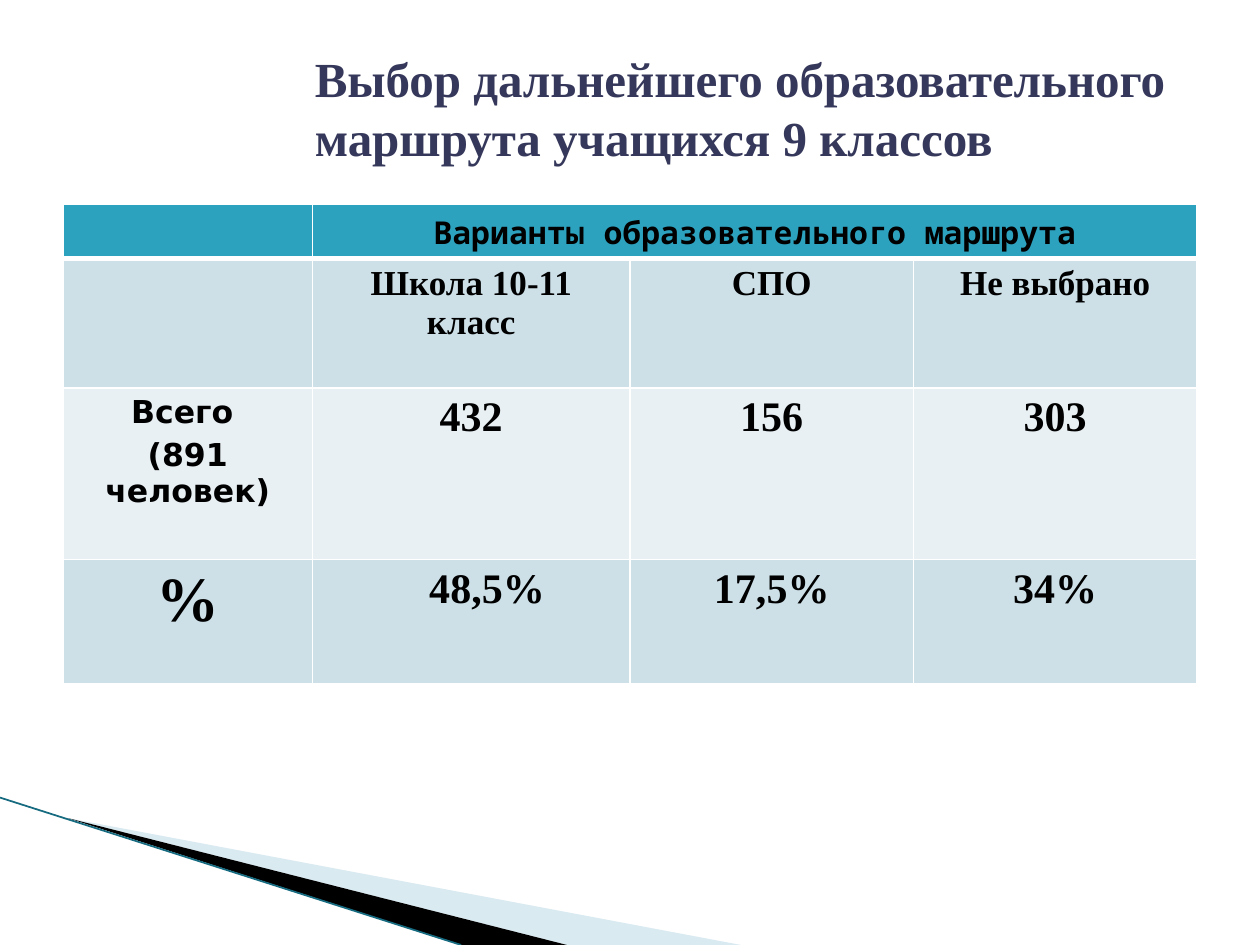
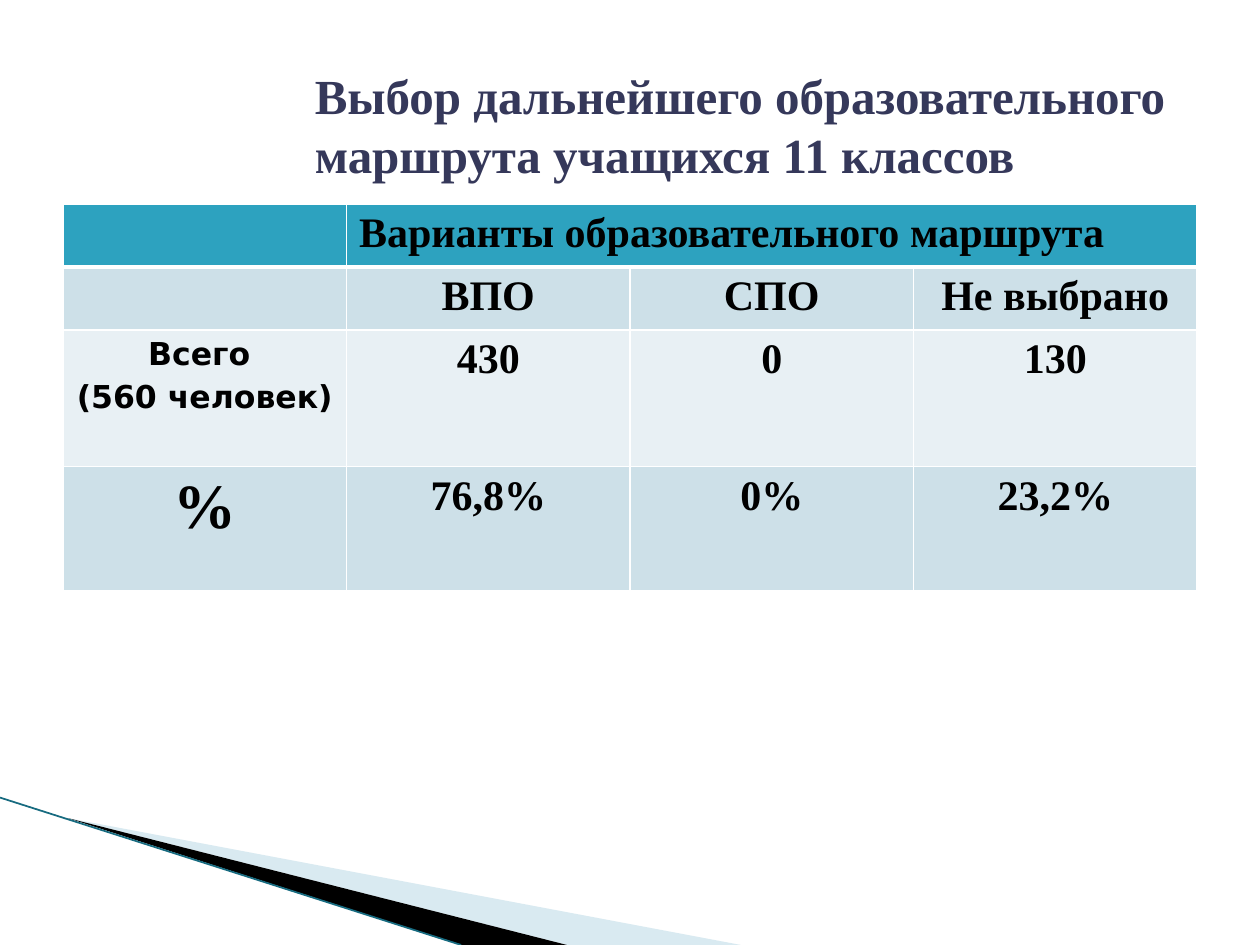
from collections import namedtuple

from lxml.etree import SubElement
from pptx import Presentation
from pptx.dml.color import RGBColor
from pptx.enum.shapes import MSO_CONNECTOR
from pptx.enum.text import MSO_ANCHOR, PP_ALIGN
from pptx.oxml.ns import qn
from pptx.util import Inches, Pt

WHITE = RGBColor(0xFF, 0xFF, 0xFF)
BLACK = RGBColor(0x00, 0x00, 0x00)
TITLE_INK = RGBColor(0x35, 0x38, 0x5A)
HEADER_FILL = RGBColor(0x2D, 0xA2, 0xBF)
DARK_ROW = RGBColor(0xCD, 0xE0, 0xE8)
LIGHT_ROW = RGBColor(0xE8, 0xF0, 0xF4)
PALE_WEDGE = RGBColor(0xA0, 0xCB, 0xDC)
EDGE_LINE = RGBColor(0x17, 0x6B, 0x80)
ROW_FILLS = (HEADER_FILL, DARK_ROW, LIGHT_ROW, DARK_ROW)

SERIF = "Times New Roman"
SANS = "DejaVu Sans"
MONO = "Noto Sans Mono"

Box = namedtuple("Box", "left top width height")
Style = namedtuple("Style", "font size align", defaults=(PP_ALIGN.CENTER,))

WEDGE_BOX = Box(0, 6.33, 6, 1.17)
TABLE_LEFT, TABLE_TOP, TABLE_WIDTH = 0.5, 1.62, 9
VALUE = Style(SERIF, 24)
TOTAL = Style(SANS, 18)
PERCENT = Style(SERIF, 36)
HEADING = "Варианты образовательного маршрута"


def add_corner_wedges(slide, box):
    def at(x, y):
        return Inches(box.left + x * box.width), Inches(box.top + y * box.height)

    def add_wedge(corners, color):
        start, *others = [at(x, y) for x, y in corners]
        builder = slide.shapes.build_freeform(*start)
        builder.add_line_segments(others, close=True)
        wedge = builder.convert_to_shape()
        wedge.shadow.inherit = False
        wedge.fill.solid()
        wedge.fill.fore_color.rgb = color
        wedge.line.fill.background()
        return wedge

    pale = add_wedge([(0.09, 0.14), (0.98, 1), (0.75, 1)], PALE_WEDGE)
    color = pale.fill._xPr.find(qn("a:solidFill"))[0]
    SubElement(color, qn("a:alpha"), val="40000")
    add_wedge([(0.09, 0.14), (0.75, 1), (0.61, 1)], BLACK)

    edge = slide.shapes.add_connector(MSO_CONNECTOR.STRAIGHT, *at(0, 0), *at(0.61, 1))
    edge.line.color.rgb = EDGE_LINE
    edge.line.width = Pt(1)
    SubElement(edge._element.spPr, qn("a:effectLst"))


def add_title(slide, text, box):
    frame = slide.shapes.add_textbox(*map(Inches, box)).text_frame
    frame.word_wrap = True
    frame.vertical_anchor = MSO_ANCHOR.MIDDLE
    title = frame.paragraphs[0]
    title.text = text
    title.font.name, title.font.size, title.font.bold = SERIF, Pt(28), True
    title.font.color.rgb = TITLE_INK


def add_borders(cell, bottom):
    for side in "LRTB":
        width = bottom if side == "B" else 1
        border = SubElement(cell._tc.get_or_add_tcPr(), qn(f"a:ln{side}"), w=str(Pt(width)))
        fill = SubElement(border, qn("a:solidFill"))
        SubElement(fill, qn("a:srgbClr"), val=str(WHITE))


def write_cell(cell, text, style):
    cell.text = text
    for index, paragraph in enumerate(cell.text_frame.paragraphs):
        paragraph.alignment = style.align
        if index:
            paragraph.space_before = Pt(0.2 * style.size)
        font = paragraph.font
        font.name, font.size, font.bold = style.font, Pt(style.size), True
        font.color.rgb = BLACK


def add_route_table(slide, column_shares, row_heights, heading_style, option_style,
                    options, total, counts, percents):
    box = Box(TABLE_LEFT, TABLE_TOP, TABLE_WIDTH, sum(row_heights))
    table = slide.shapes.add_table(len(row_heights), len(column_shares),
                                   *map(Inches, box)).table
    for column, share in zip(table.columns, column_shares):
        column.width = Inches(share * box.width)
    for row, height in zip(table.rows, row_heights):
        row.height = Inches(height)

    for index, (row, fill) in enumerate(zip(table.rows, ROW_FILLS)):
        for cell in row.cells:
            add_borders(cell, bottom=1 if index else 3)
            cell.fill.solid()
            cell.fill.fore_color.rgb = fill

    table.cell(0, 1).merge(table.cell(0, len(options)))
    write_cell(table.cell(0, 1), HEADING, heading_style)
    write_cell(table.cell(2, 0), total, TOTAL)
    write_cell(table.cell(3, 0), "%", PERCENT)
    for row, (texts, style) in enumerate(
            [(options, option_style), (counts, VALUE), (percents, VALUE)], start=1):
        for column, text in enumerate(texts, start=1):
            write_cell(table.cell(row, column), text, style)
    return table


def add_route_slide(deck, title, title_box):
    slide = deck.slides.add_slide(deck.slide_layouts[6])
    add_corner_wedges(slide, WEDGE_BOX)
    add_title(slide, title, title_box)
    return slide


def main():
    deck = Presentation()
    deck.slide_width, deck.slide_height = Inches(10), Inches(7.5)

    grade_9 = add_route_slide(
        deck, "Выбор дальнейшего образовательного маршрута учащихся 9 классов",
        Box(2.4, 0, 7.09, 1.7))
    routes_9 = add_route_table(
        grade_9, (0.22, 0.28, 0.25, 0.25), (0.43, 1.03, 1.36, 0.99),
        heading_style=Style(MONO, 18), option_style=Style(SERIF, 20),
        options=("Школа 10-11 класс", "СПО", "Не выбрано"),
        total="Всего \n(891 человек)",
        counts=("432", "156", "303"), percents=("48,5%", "17,5%", "34%"))
    routes_9.cell(3, 1).margin_left = Inches(0.35)

    grade_11 = add_route_slide(
        deck, "Выбор дальнейшего образовательного маршрута учащихся 11 классов",
        Box(2.4, 0.36, 7.32, 1.25))
    add_route_table(
        grade_11, (0.25,) * 4, (0.46, 0.46, 1.08, 0.99),
        heading_style=Style(SERIF, 24, PP_ALIGN.LEFT), option_style=VALUE,
        options=("ВПО", "СПО", "Не выбрано"),
        total="Всего \n(560 человек)",
        counts=("430", "0", "130"), percents=("76,8%", "0%", "23,2%"))

    deck.save("out.pptx")


if __name__ == "__main__":
    main()
